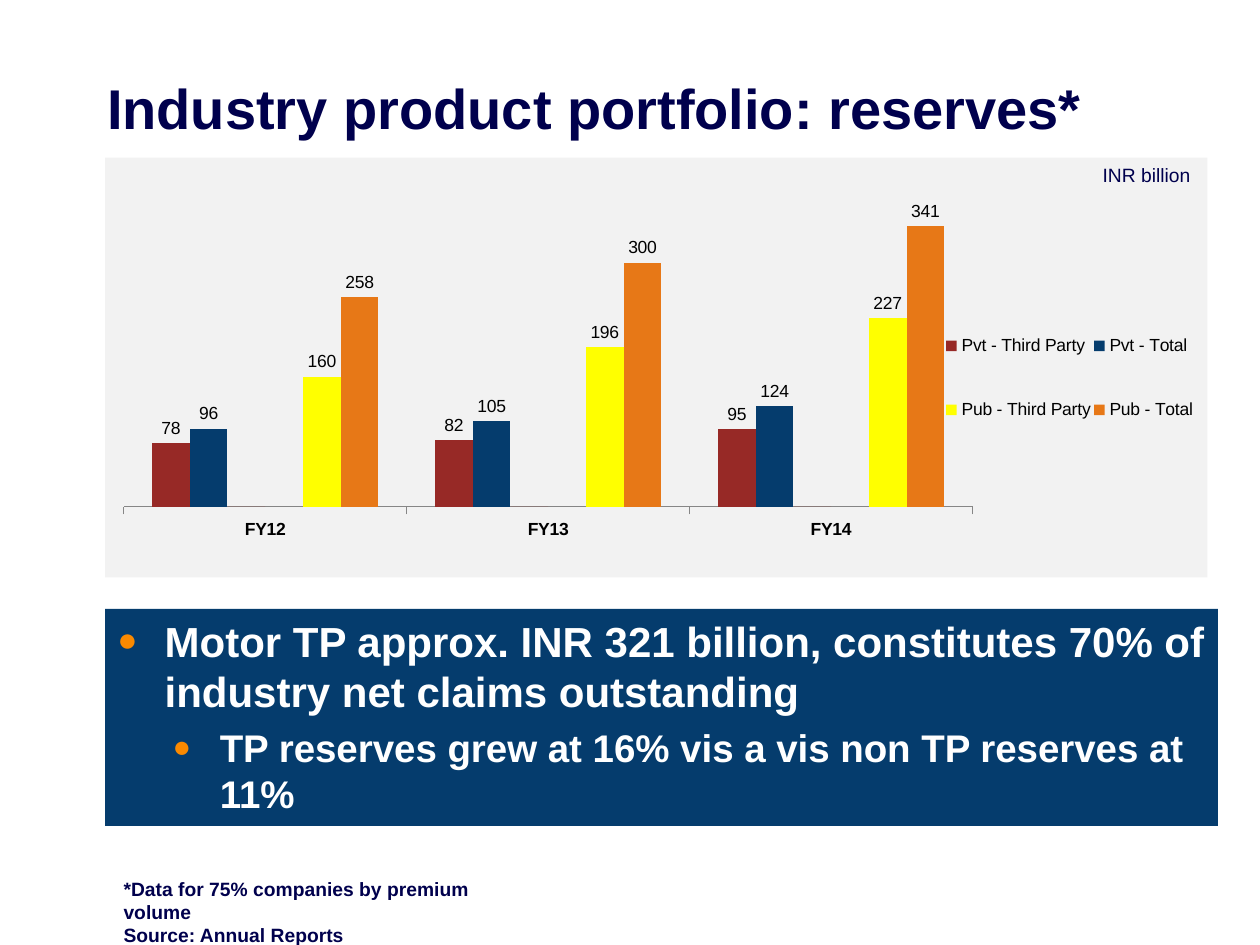
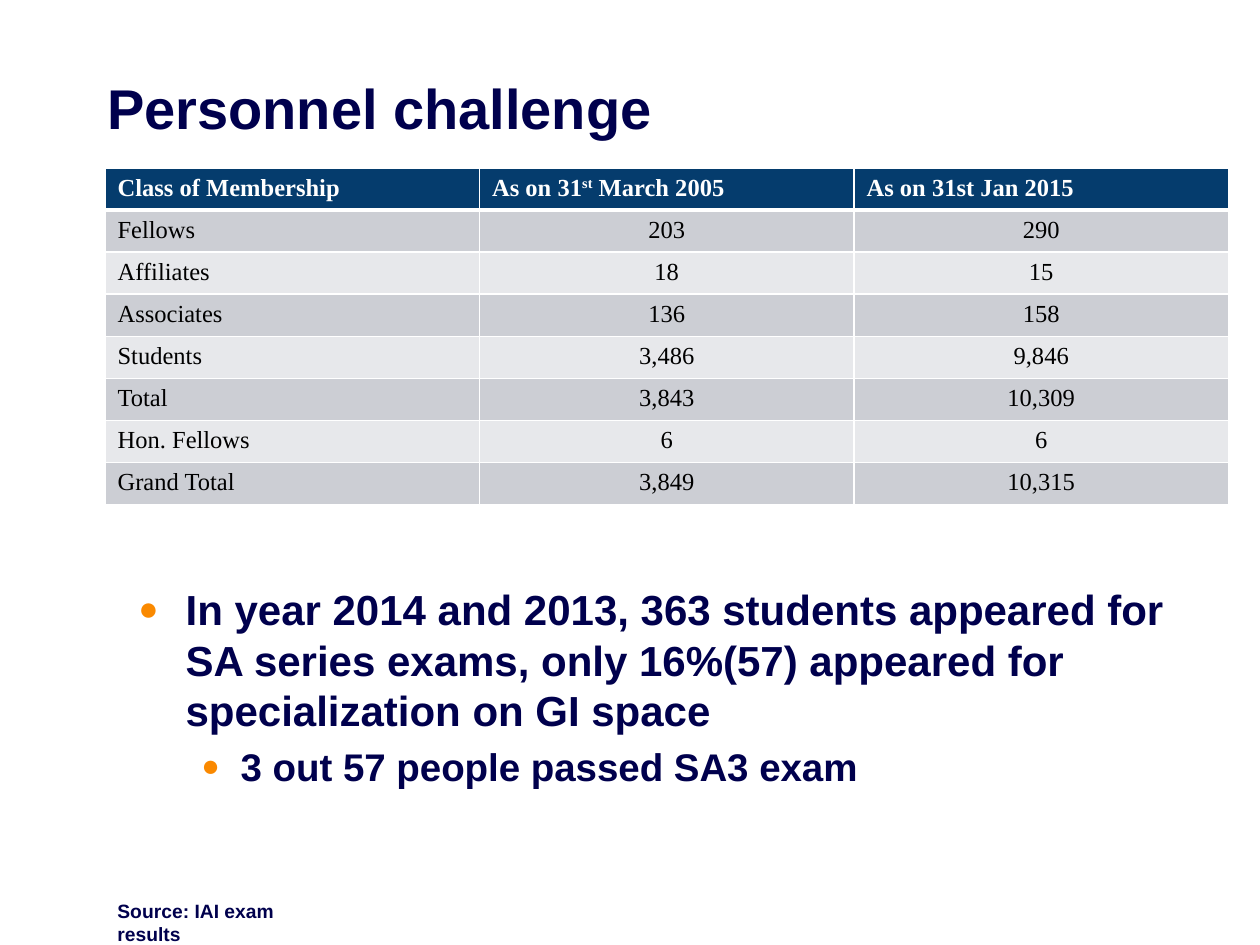
from dataclasses import dataclass

from lxml import etree
from pptx import Presentation
from pptx.chart.data import CategoryChartData
from pptx.dml.color import RGBColor
from pptx.enum import chart as ch, shapes, text
from pptx.oxml import parse_xml
from pptx.oxml.ns import nsdecls, qn
from pptx.util import Pt


@dataclass(frozen=True)
class Theme:
    font: str = "Arial"
    table_font: str = "Times New Roman"
    ink: str = "00004D"
    navy: str = "053C6D"
    white: str = "FFFFFF"
    black: str = "000000"
    panel: str = "F2F2F2"
    axis: str = "868686"
    bullet: str = "FA8900"
    bands: tuple = ("CCCED4", "E7E8EB")
    title: int = 32
    points: tuple = (24, 22)
    cell: int = 14
    note: int = 11
    chart: int = 10


T = Theme()
LEFT = 60

RESERVES = {
    "title": "Industry product portfolio: reserves*",
    "unit": "INR billion",
    "years": ["FY12", "FY13", "FY14"],
    # name, values, colour, label of the last bar where it differs
    "series": [
        ("Pvt - Third Party", (78, 82, 95), "972926", None),
        ("Pvt - Total", (96, 105, 124), "053C6D", None),
        ("Series 3", (0, 0, 0), "972926", None),
        ("Series 4", (0, 0, 0), "7F7F7F", None),
        ("Pub - Third Party", (160, 196, 232), "FFFF00", "227"),
        ("Pub - Total", (258, 300, 345), "E77817", "341"),
    ],
    "points": [
        "Motor TP approx. INR 321 billion, constitutes 70% of industry net claims outstanding",
        "TP reserves grew at 16% vis a vis non TP reserves at 11%",
    ],
    "notes": ["*Data for 75% companies by premium volume", "Source: Annual Reports"],
}

PERSONNEL = {
    "title": "Personnel challenge",
    "header": [["Class of Membership"], ["As on 31", "st", " March 2005"], ["As on 31st Jan 2015"]],
    "rows": [
        ("Fellows", "203", "290"),
        ("Affiliates", "18", "15"),
        ("Associates", "136", "158"),
        ("Students", "3,486", "9,846"),
        ("Total", "3,843", "10,309"),
        ("Hon. Fellows", "6", "6"),
        ("Grand Total", "3,849", "10,315"),
    ],
    "points": [
        "In year 2014 and 2013, 363 students appeared for SA series exams, "
        "only 16%(57) appeared for specialization on GI space",
        "3 out 57 people passed SA3 exam",
    ],
    "notes": ["Source: IAI exam results"],
}


def rgb(color):
    return RGBColor.from_string(color)


def paint(part, color):
    part.fill.solid()
    part.fill.fore_color.rgb = rgb(color)


def style(font, size, color, bold=False, name=T.font):
    font.name, font.size, font.bold = name, Pt(size), bold
    font.color.rgb = rgb(color)


def add_titled_slide(prs, title):
    s = prs.slides.add_slide(prs.slide_layouts[5])
    sp = s.shapes.title
    sp.left, sp.top, sp.width, sp.height = Pt(54), Pt(30), Pt(620), Pt(54)
    tf = sp.text_frame
    tf.text = title
    tf.vertical_anchor = text.MSO_ANCHOR.BOTTOM
    tf.auto_size = text.MSO_AUTO_SIZE.NONE
    p = tf.paragraphs[0]
    p.alignment = text.PP_ALIGN.LEFT
    style(p.runs[0].font, T.title, T.ink, True)
    return s


def add_text(s, lines, x, y, w, h, bold=True, wrap=True):
    tf = s.shapes.add_textbox(Pt(x), Pt(y), Pt(w), Pt(h)).text_frame
    tf.word_wrap = wrap
    tf.text = "\n".join(lines)
    for p in tf.paragraphs:
        style(p.runs[0].font, T.note, T.ink, bold)


def fill_points(sp, points, color, sub_hang):
    """Write a main point and its sub-point with round coloured bullets."""
    tf = sp.text_frame
    tf.word_wrap = True
    tf.vertical_anchor = text.MSO_ANCHOR.TOP
    tf.margin_right = Pt(5)
    tf.text = "\n".join(points)
    for level, (p, indent, hang) in enumerate(zip(tf.paragraphs, (27, 58.5), (27, sub_hang))):
        p.alignment = text.PP_ALIGN.LEFT
        p.level = level
        if level:
            p.space_before = Pt(4.5)
        pPr = p._p.get_or_add_pPr()
        pPr.set("marL", str(Pt(indent)))
        pPr.set("indent", str(-Pt(hang)))
        for xml in (f'<a:buClr {nsdecls("a")}><a:srgbClr val="{T.bullet}"/></a:buClr>',
                    f'<a:buSzPct {nsdecls("a")} val="80000"/>',
                    f'<a:buFont {nsdecls("a")} typeface="{T.font}"/>',
                    f'<a:buChar {nsdecls("a")} char="●"/>'):
            pPr.append(parse_xml(xml))
        style(p.runs[0].font, T.points[level], color, True)


def layout_xml(x, y, w, h, inner=False):
    target = '<c:layoutTarget val="inner"/>' if inner else ""
    return parse_xml(
        f'<c:layout {nsdecls("c")}><c:manualLayout>{target}'
        '<c:xMode val="edge"/><c:yMode val="edge"/>'
        f'<c:x val="{x}"/><c:y val="{y}"/><c:w val="{w}"/><c:h val="{h}"/>'
        '</c:manualLayout></c:layout>')


def set_layout(parent, layout, after=None):
    for old in parent.findall(qn("c:layout")):
        parent.remove(old)
    if after is None:
        parent.insert(0, layout)
    else:
        after.addnext(layout)


def add_legend(chart, hidden):
    chart.has_legend = True
    legend = chart.legend
    legend.position = ch.XL_LEGEND_POSITION.RIGHT
    legend.include_in_layout = False
    last = legend._element.find(qn("c:legendPos"))
    for i in hidden:
        entry = parse_xml(f'<c:legendEntry {nsdecls("c")}><c:idx val="{i}"/>'
                          '<c:delete val="1"/></c:legendEntry>')
        last.addnext(entry)
        last = entry
    set_layout(legend._element, layout_xml(0.76, 0.32, 0.23, 0.41), last)


def add_reserves_chart(s, years, series):
    data = CategoryChartData()
    data.categories = years
    for name, values, *_ in series:
        data.add_series(name, values)
    chart = s.shapes.add_chart(ch.XL_CHART_TYPE.COLUMN_CLUSTERED,
                               Pt(LEFT), Pt(90), Pt(630), Pt(240), data).chart
    chart.has_title = False
    style(chart.font, T.chart, T.black)
    panel = parse_xml(f'<c:spPr {nsdecls("c", "a")}><a:solidFill><a:srgbClr val="{T.panel}"/>'
                      '</a:solidFill><a:ln><a:noFill/></a:ln></c:spPr>')
    chart.element.find(qn("c:chart")).addnext(panel)
    set_layout(chart.element.find(".//" + qn("c:plotArea")),
               layout_xml(0.017, 0.057, 0.77, 0.775, inner=True))

    years_axis, amounts = chart.category_axis, chart.value_axis
    years_axis.major_tick_mark = ch.XL_TICK_MARK.OUTSIDE
    years_axis.format.line.color.rgb = rgb(T.axis)
    style(years_axis.tick_labels.font, T.chart, T.black, True)
    amounts.visible = amounts.has_major_gridlines = False
    amounts.minimum_scale, amounts.maximum_scale = 0, 400

    plot = chart.plots[0]
    plot.gap_width, plot.overlap, plot.vary_by_categories = 150, 0, False
    for bars, (_, values, color, last_label) in zip(plot.series, series):
        paint(bars.format, color)
        if not any(values):
            continue
        labels = bars.data_labels
        labels.show_value = True
        labels.number_format, labels.number_format_is_linked = "#,##0", False
        labels.position = ch.XL_LABEL_POSITION.OUTSIDE_END
        if last_label:
            label = bars.points[len(values) - 1].data_label
            label.text_frame.text = last_label
            style(label.text_frame.paragraphs[0].runs[0].font, T.chart, T.black)
            label.position = ch.XL_LABEL_POSITION.OUTSIDE_END
    add_legend(chart, [i for i, (_, values, *_) in enumerate(series) if not any(values)])


def set_borders(cell, top, bottom):
    tcPr = cell._tc.get_or_add_tcPr()
    for i, (side, width) in enumerate((("L", 1), ("R", 1), ("T", top), ("B", bottom))):
        ln = etree.Element(qn(f"a:ln{side}"), w=str(Pt(width)))
        fill = etree.SubElement(ln, qn("a:solidFill"))
        etree.SubElement(fill, qn("a:srgbClr"), val=T.white)
        tcPr.insert(i, ln)


def add_membership_table(s, header, rows):
    grid = [header] + [[[value] for value in row] for row in rows]
    row_h, col_w = 22.7, 214
    table = s.shapes.add_table(len(grid), len(header), Pt(LEFT), Pt(96),
                               Pt(col_w * len(header)), Pt(row_h * len(grid))).table
    table.horz_banding = False
    for col in table.columns:
        col.width = Pt(col_w)
    for i, row in enumerate(grid):
        table.rows[i].height = Pt(row_h)
        for j, parts in enumerate(row):
            cell = table.cell(i, j)
            paint(cell, T.bands[(i - 1) % 2] if i else T.navy)
            set_borders(cell, 3 if i == 1 else 1, 1 if i else 3)
            p = cell.text_frame.paragraphs[0]
            p.alignment = text.PP_ALIGN.CENTER if i and j else text.PP_ALIGN.LEFT
            for part in parts:
                r = p.add_run()
                r.text = part
                style(r.font, T.cell, T.black if i else T.white, not i, T.table_font)
                if part == "st":
                    r._r.get_or_add_rPr().set("baseline", "30000")


def build_reserves(prs):
    s = add_titled_slide(prs, RESERVES["title"])
    add_text(s, RESERVES["notes"], 63.5, 497.5, 253, 34)
    add_reserves_chart(s, RESERVES["years"], RESERVES["series"])
    band = s.shapes.add_shape(shapes.MSO_SHAPE.RECTANGLE, Pt(LEFT), Pt(348), Pt(636), Pt(124))
    band.shadow.inherit = False
    paint(band, T.navy)
    band.line.fill.background()
    fill_points(band, RESERVES["points"], T.white, 27)
    add_text(s, [RESERVES["unit"]], 623, 90, 67, 21, bold=False, wrap=False)


def build_personnel(prs):
    s = add_titled_slide(prs, PERSONNEL["title"])
    box = s.shapes.add_textbox(Pt(72), Pt(330), Pt(618), Pt(150))
    fill_points(box, PERSONNEL["points"], T.ink, 22.5)
    add_membership_table(s, PERSONNEL["header"], PERSONNEL["rows"])
    add_text(s, PERSONNEL["notes"], LEFT, 510.5, 135, 29)


def main():
    prs = Presentation()
    prs.slide_width, prs.slide_height = Pt(720), Pt(540)
    build_reserves(prs)
    build_personnel(prs)
    prs.save("out.pptx")


if __name__ == "__main__":
    main()
